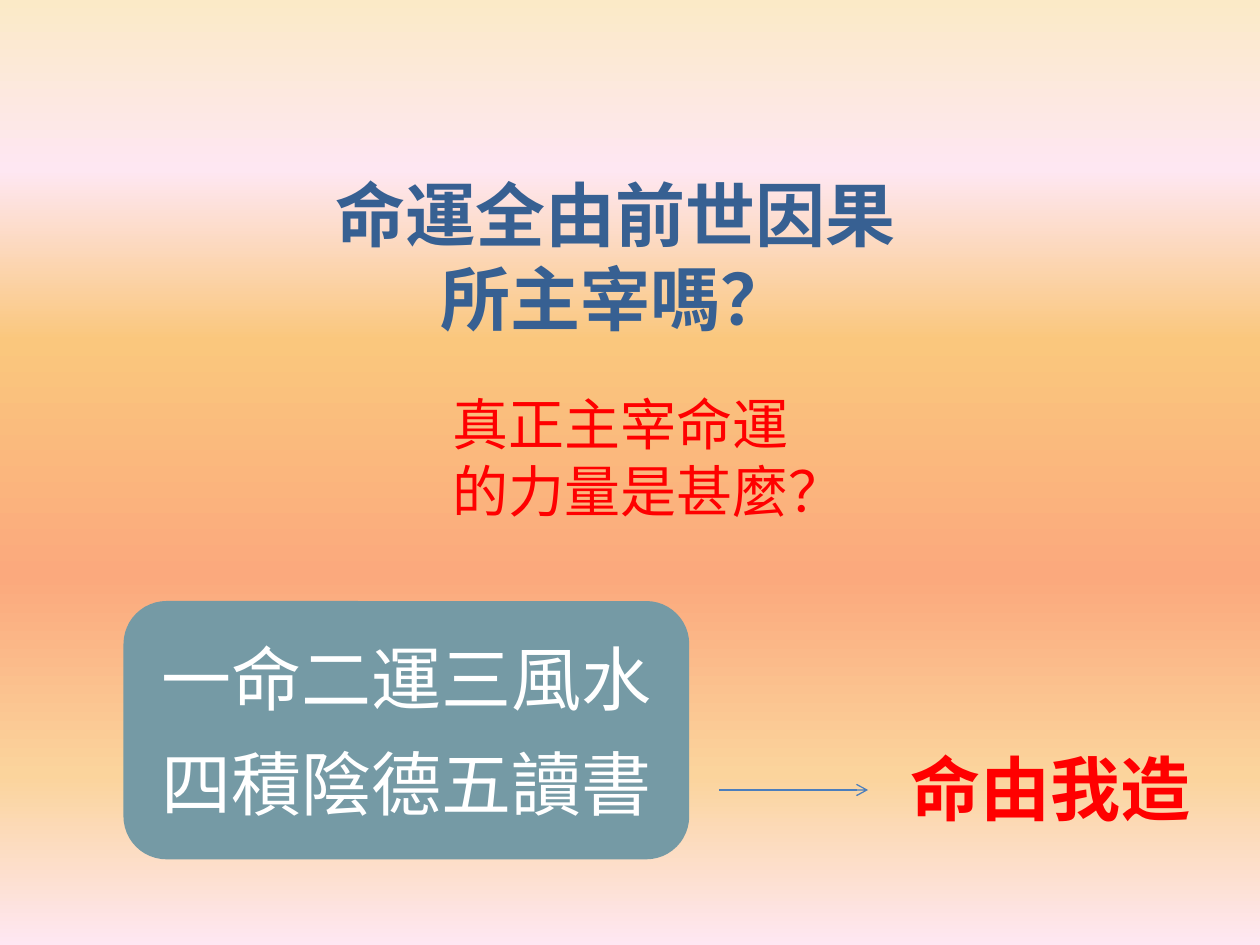
from dataclasses import dataclass

from lxml import etree
from pptx import Presentation
from pptx.dml.color import RGBColor
from pptx.enum.shapes import MSO_CONNECTOR, MSO_SHAPE
from pptx.enum.text import MSO_ANCHOR, MSO_AUTO_SIZE, PP_ALIGN
from pptx.oxml.ns import qn
from pptx.util import Inches, Pt

LEFT, CENTER = PP_ALIGN.LEFT, PP_ALIGN.CENTER
MIDDLE = MSO_ANCHOR.MIDDLE
GROW = MSO_AUTO_SIZE.SHAPE_TO_FIT_TEXT
ROUNDED, STRAIGHT = MSO_SHAPE.ROUNDED_RECTANGLE, MSO_CONNECTOR.STRAIGHT
SLIDE_W, SLIDE_H = 10, 7.5


@dataclass(frozen=True)
class Theme:
    sky: tuple = ((0, "FBEAC7"), (18, "FEE7F2"), (36, "FAC77D"),
                  (61, "FBA97D"), (82, "FBD49C"), (100, "FEE7F2"))
    title: str = "376092"
    accent: str = "FF0000"
    panel: str = "759AA5"
    panel_text: str = "FFFFFF"
    arrow: str = "4B7EBC"
    font_sc: str = "Noto Sans CJK SC"
    font_jp: str = "Noto Sans CJK JP"
    font_tc: str = "Noto Sans CJK TC"
    large: int = 40
    medium: int = 32


THEME = Theme()


def share(x, y, w, h):
    """Turn shares of the slide into a box in EMU."""
    return (Inches(x * SLIDE_W), Inches(y * SLIDE_H),
            Inches(w * SLIDE_W), Inches(h * SLIDE_H))


def add_run(p, text, font, size, color, bold=False):
    r = p.add_run()
    r.text = text
    r.font.name, r.font.size, r.font.bold = font, Pt(size), bold
    r.font.color.rgb = RGBColor.from_string(color)
    # East Asian glyphs take their own typeface
    etree.SubElement(r.font._element, qn("a:ea")).set("typeface", font)


def add_text(s, box, runs, size, color, bold=False, align=CENTER):
    tf = s.shapes.add_textbox(*box).text_frame
    tf.word_wrap, tf.auto_size = True, GROW
    p = tf.paragraphs[0]
    p.alignment = align
    for text, font in runs:
        add_run(p, text, font, size, color, bold)


def paint_background(s):
    fill = s.background.fill
    fill.gradient()
    fill.gradient_angle = 270
    stops = s._element.find(".//" + qn("a:gsLst"))
    for old in list(stops):
        stops.remove(old)
    for percent, color in THEME.sky:
        stop = etree.SubElement(stops, qn("a:gs"), pos=str(percent * 1000))
        etree.SubElement(stop, qn("a:srgbClr"), val=color)


def add_questions(s, title_box, question_box):
    add_text(s, title_box, [("命運全由前世因果所主宰嗎？", THEME.font_sc)],
             THEME.large, THEME.title, bold=True)
    add_text(s, question_box,
             [("真正主宰命運的力量是甚麼", THEME.font_sc), ("？", THEME.font_tc)],
             THEME.medium, THEME.accent)


def add_proverb(s, box):
    sp = s.shapes.add_shape(ROUNDED, *box)
    sp.shadow.inherit = False
    sp.fill.solid()
    sp.fill.fore_color.rgb = RGBColor.from_string(THEME.panel)
    sp.line.fill.background()
    tf = sp.text_frame
    tf.word_wrap, tf.vertical_anchor = True, MIDDLE
    for i, line in enumerate(("一命二運三風水", "四積陰德五讀書")):
        p = tf.add_paragraph() if i else tf.paragraphs[0]
        p.alignment = CENTER
        p.space_before = Pt(12 * i)
        add_run(p, line, THEME.font_jp, THEME.large, THEME.panel_text)


def add_arrow(s, box):
    x, y, w, h = box
    line = s.shapes.add_connector(STRAIGHT, x, y, x + w, y + h)
    line.line.color.rgb = RGBColor.from_string(THEME.arrow)
    line.line.width = Pt(0.75)
    etree.SubElement(line.line._get_or_add_ln(), qn("a:tailEnd"), type="arrow")
    etree.SubElement(line._element.spPr, qn("a:effectLst"))


def add_answer(s, box):
    add_text(s, box, [("命由我造", THEME.font_jp)], THEME.large, THEME.accent,
             bold=True, align=LEFT)


def main():
    prs = Presentation()
    prs.slide_width, prs.slide_height = Inches(SLIDE_W), Inches(SLIDE_H)
    s = prs.slides.add_slide(prs.slide_layouts[6])
    paint_background(s)
    # Questions at the top, proverb leading to its answer below
    add_questions(s, (Inches(2.56), Inches(1.31), Inches(4.65), Inches(1.75)),
                  (Inches(3.35), Inches(3.04), Inches(3.15), Inches(1.18)))
    add_proverb(s, (Inches(0.98), Inches(4.77), Inches(4.49), Inches(2.05)))
    add_arrow(s, (Inches(5.71), Inches(6.27), Inches(1.18), 0))
    add_answer(s, (Inches(7.13), Inches(5.87), Inches(2.52), Inches(0.77)))
    prs.save("out.pptx")


if __name__ == "__main__":
    main()
